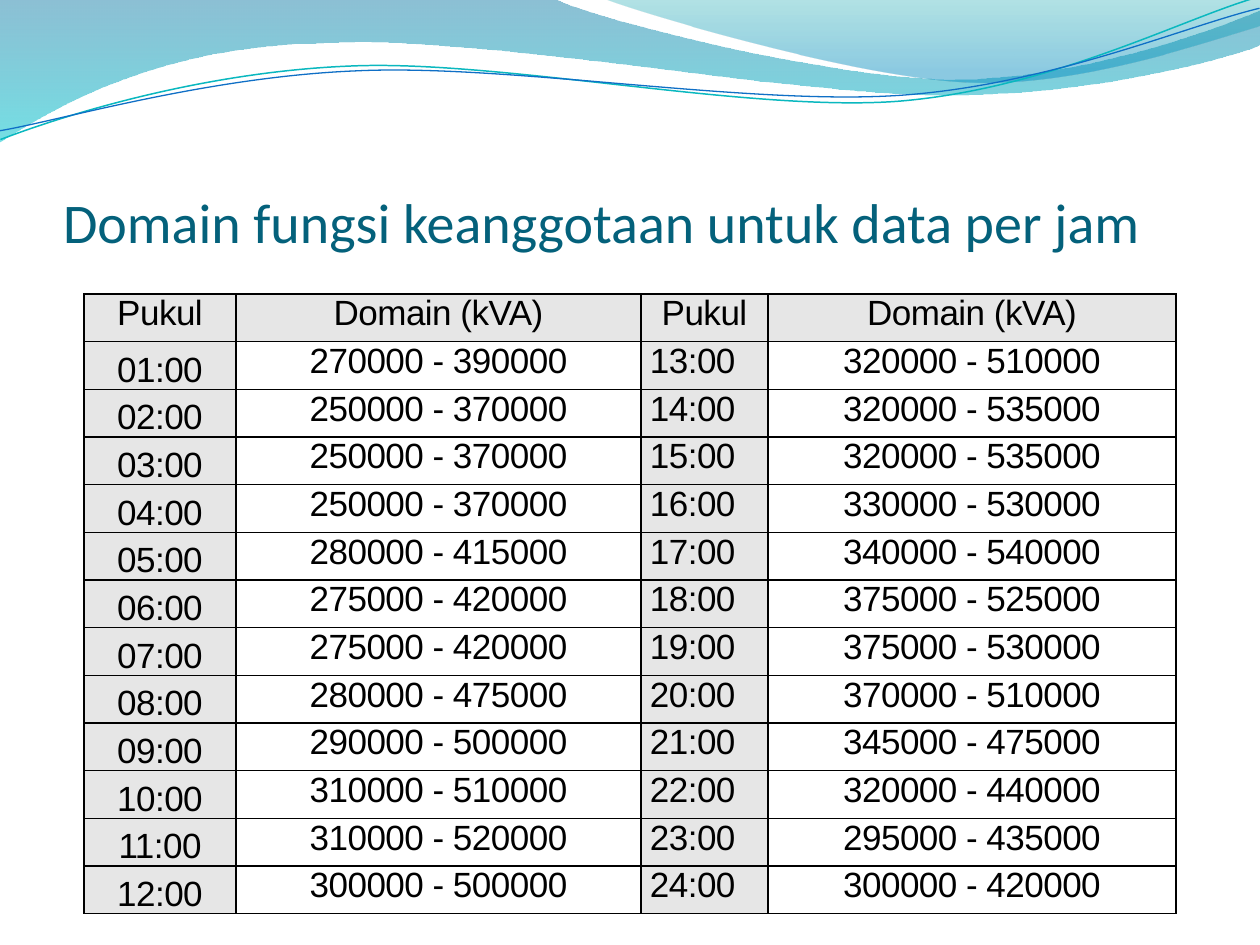
from lxml import etree
from pptx import Presentation
from pptx.dml.color import RGBColor
from pptx.enum.text import MSO_ANCHOR, PP_ALIGN
from pptx.oxml.ns import qn
from pptx.util import Inches, Pt

PX = 7257  # EMU per pixel at 126 pixels to the inch
TOP, BOTTOM = MSO_ANCHOR.TOP, MSO_ANCHOR.BOTTOM
LEFT, CENTER, JUSTIFY = PP_ALIGN.LEFT, PP_ALIGN.CENTER, PP_ALIGN.JUSTIFY
color = RGBColor.from_string


def draw_curve(shapes, start, segments, closed):
    """Draw straight (x, y) and cubic (x1, y1, x2, y2, x, y) segments in px."""
    builder = shapes.build_freeform(*start, scale=PX)
    for segment in segments:
        builder.add_line_segments(list(zip(segment[::2], segment[1::2])), close=False)
    shape = builder.convert_to_shape()
    shape.shadow.inherit = False
    outline = next(shape._element.iter(qn("a:path")))
    lines = iter(outline.findall(qn("a:lnTo")))
    for segment in segments:
        first = next(lines)
        if len(segment) == 6:
            curve = etree.Element(qn("a:cubicBezTo"))
            outline.replace(first, curve)
            curve.append(first[0])
            for _ in range(2):
                line = next(lines)
                curve.append(line[0])
                outline.remove(line)
    if closed:
        etree.SubElement(outline, qn("a:close"))
    return shape


def write_text(frame, text, *, size, font, hex_color, align=LEFT, before=0, after=0, spacing=0):
    paragraph = frame.paragraphs[0]
    paragraph.alignment = align
    paragraph.space_before, paragraph.space_after = Pt(before), Pt(after)
    run = paragraph.add_run()
    run.text = text
    run.font.size, run.font.name = Pt(size), font
    run.font.color.rgb = color(hex_color)
    if spacing:
        run.font._element.set("spc", str(round(spacing * 100)))


presentation = Presentation()
presentation.slide_width, presentation.slide_height = Inches(10), Inches(7.5)
slide = presentation.slides.add_slide(presentation.slide_layouts[6])

# Header waves: start, segments, gradient stops (position, colour, opacity %)
waves = [
    ((0, 0),
     [(554, -1), (600, 21, 837, 79, 955, 79), (1075, 79, 1207, 33, 1260, 11),
      (1261, 45), (1239, 55, 1096, 96, 940, 95), (784, 94, 481, 35, 324, 43),
      (163, 45, 58, 105, -1, 142), (0, 0)],
     [(0, "0074A1", 45), (1, "00C6CF", 55)]),
    ((604, -1),
     [(641, 14, 859, 78, 969, 82), (1079, 87, 1211, 40, 1260, 26), (1260, 0), (604, -1)],
     [(0, "00A1A9", 30), (0.8, "008BBF", 45)]),
]
for start, segments, stops in waves:
    wave = draw_curve(slide.shapes, start, segments, closed=True)
    wave.line.fill.background()
    wave.fill.gradient()
    wave.fill.gradient_angle = 270
    for stop, (position, hex_color, _) in zip(wave.fill.gradient_stops, stops):
        stop.position = position
        stop.color.rgb = color(hex_color)
    for node, (_, _, opacity) in zip(wave._element.spPr.iter(qn("a:srgbClr")), stops):
        etree.SubElement(node, qn("a:alpha"), val=str(opacity * 1000))

# Thin lines following the waves, tilted slightly upwards to the right
wave_lines = [
    ((-2, 110), [(58, 90, 200, 52, 350, 53), (499, 53, 745, 118, 896, 114),
                 (1049, 109, 1184, 45, 1260, 27)], "0AB8BF", 0.85),
    ((-2, 101), [(57, 94, 207, 57, 357, 58), (509, 58, 750, 112, 902, 108),
                 (1052, 104, 1188, 52, 1262, 38)], "0F6FC6", 0.75),
]
for start, segments, hex_color, width in wave_lines:
    wave_line = draw_curve(slide.shapes, start, segments, closed=False)
    wave_line.rotation = 357.3
    wave_line.fill.background()
    wave_line.line.color.rgb = color(hex_color)
    wave_line.line.width = Pt(width)

title = slide.shapes.add_textbox(63 * PX, 97 * PX, 1144 * PX, 158 * PX).text_frame
title.word_wrap = True
title.vertical_anchor = BOTTOM
title.margin_left = title.margin_right = title.margin_bottom = 0
title.margin_top = 6 * PX
write_text(title, "Domain fungsi keanggotaan untuk data per jam",
           size=32, font="Calibri", hex_color="04617B")

# Domain limits in thousands of kVA, hours 1 to 24
domains = [
    (270, 390), (250, 370), (250, 370), (250, 370), (280, 415), (275, 420),
    (275, 420), (280, 475), (290, 500), (310, 510), (310, 520), (300, 500),
    (320, 510), (320, 535), (320, 535), (330, 530), (340, 540), (375, 525),
    (375, 530), (370, 510), (345, 475), (320, 440), (295, 435), (300, 420),
]
entries = [(f"{hour:02}:00", f"{low}000 - {high}000")
           for hour, (low, high) in enumerate(domains, 1)]
rows = [("Pukul", "Domain (kVA)") * 2]
rows += [morning + evening for morning, evening in zip(entries[:12], entries[12:])]

column_widths = [152, 405, 127, 408]
table_height = 620 * PX
table = slide.shapes.add_table(len(rows), len(column_widths), 84 * PX, 294 * PX,
                               sum(column_widths) * PX, table_height).table
table.first_row = table.horz_banding = False
for column, width in zip(table.columns, column_widths):
    column.width = width * PX
for row_index, texts in enumerate(rows):
    table.rows[row_index].height = table_height // len(rows)
    for column_index, text in enumerate(texts):
        is_header = row_index == 0
        cell = table.cell(row_index, column_index)
        cell.margin_left = cell.margin_right = 9 * PX
        cell.margin_top = cell.margin_bottom = 0
        cell.vertical_anchor = BOTTOM if column_index == 0 and not is_header else TOP
        write_text(cell.text_frame, text, size=20, font="Arial", hex_color="000000",
                   align=JUSTIFY if column_index == 2 and not is_header else CENTER,
                   before=3, after=6, spacing=-0.3)
        properties = cell._tc.get_or_add_tcPr()
        for side in ("lnL", "lnR", "lnT", "lnB"):
            border = etree.SubElement(properties, qn(f"a:{side}"), w=str(Pt(1)))
            border_fill = etree.SubElement(border, qn("a:solidFill"))
            etree.SubElement(border_fill, qn("a:srgbClr"), val="000000")
        if is_header or column_index in (0, 2):
            cell.fill.solid()
            cell.fill.fore_color.rgb = color("E6E6E6")
        else:
            cell.fill.background()

presentation.save("out.pptx")
